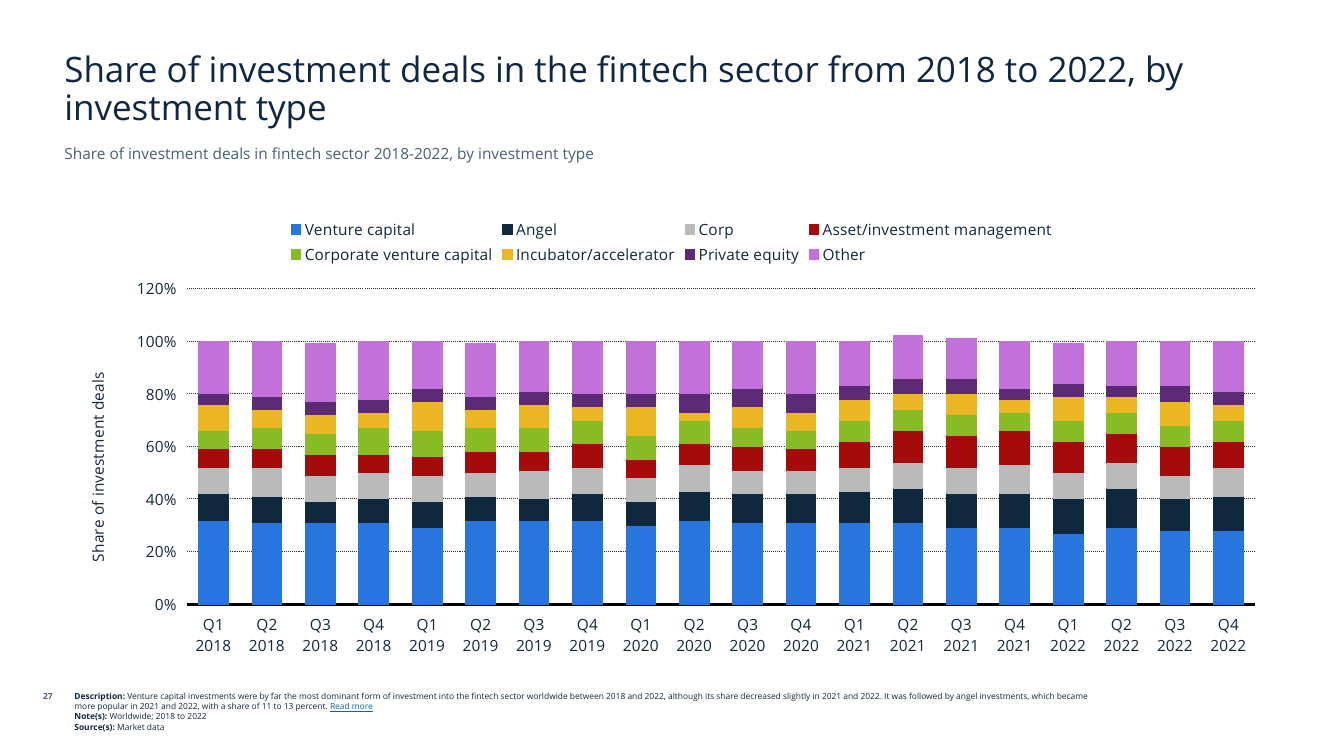
from pptx import Presentation
from pptx.chart.data import CategoryChartData
from pptx.dml.color import RGBColor
from pptx.enum.chart import XL_CHART_TYPE, XL_LEGEND_POSITION, XL_TICK_LABEL_POSITION, XL_TICK_MARK
from pptx.enum.dml import MSO_LINE
from pptx.enum.text import MSO_ANCHOR, PP_ALIGN
from pptx.util import Inches, Pt

STACKED = XL_CHART_TYPE.COLUMN_STACKED
LEGEND_TOP = XL_LEGEND_POSITION.TOP
LABELS_LOW = XL_TICK_LABEL_POSITION.LOW
NO_TICK = XL_TICK_MARK.NONE
DOTTED = MSO_LINE.ROUND_DOT
TOP, BOTTOM = MSO_ANCHOR.TOP, MSO_ANCHOR.BOTTOM
LEFT, RIGHT = PP_ALIGN.LEFT, PP_ALIGN.RIGHT

NAVY = RGBColor(0x0F, 0x27, 0x41)
SLATE = RGBColor(0x45, 0x5F, 0x7C)
LINK_BLUE = RGBColor(0x05, 0x63, 0xC1)
BLACK = RGBColor(0x00, 0x00, 0x00)
GRID_GREY = RGBColor(0x2F, 0x2F, 0x2F)
BLUE = RGBColor(0x28, 0x75, 0xDD)
DARK_BLUE = RGBColor(0x0F, 0x28, 0x3E)
GREY = RGBColor(0xBA, 0xBA, 0xBA)
RED = RGBColor(0xA6, 0x0B, 0x0B)
GREEN = RGBColor(0x87, 0xBC, 0x24)
YELLOW = RGBColor(0xEB, 0xB5, 0x23)
PURPLE = RGBColor(0x5D, 0x2B, 0x76)
LILAC = RGBColor(0xC2, 0x71, 0xDA)


def style_font(font, size, color, bold=False, underline=False):
    formats = {"name": "Open Sans", "size": Pt(size), "bold": bold, "underline": underline}
    for attribute, value in formats.items():
        setattr(font, attribute, value)
    font.color.rgb = color


def add_text(slide, box, paragraphs, size, anchor=TOP, align=LEFT, spacing=1.0):
    frame = slide.shapes.add_textbox(*[Inches(length) for length in box]).text_frame
    frame.word_wrap = True
    frame.vertical_anchor = anchor
    for index, runs in enumerate(paragraphs):
        paragraph = frame.add_paragraph() if index else frame.paragraphs[0]
        paragraph.alignment = align
        paragraph.line_spacing = spacing
        for text, color, bold, underline in runs:
            run = paragraph.add_run()
            run.text = text
            style_font(run.font, size, color, bold, underline)


presentation = Presentation()
presentation.slide_width = Inches(13.33)
presentation.slide_height = Inches(7.5)
slide = presentation.slides.add_slide(presentation.slide_layouts[6])

headline = "Share of investment deals in the fintech sector from 2018 to 2022, by investment type"
subtitle = "Share of investment deals in fintech sector 2018-2022, by investment type"
description = (
    "Venture capital investments were by far the most dominant form of investment into the "
    "fintech sector worldwide between 2018 and 2022, although its share decreased slightly in "
    "2021 and 2022. It was followed by angel investments, which became more popular in 2021 "
    "and 2022, with a share of 11 to 13 percent. "
)
footnotes = [
    [("Description: ", NAVY, True, False), (description, NAVY, False, False),
     ("Read more", LINK_BLUE, False, True)],
    [("Note(s): ", NAVY, True, False), ("Worldwide; 2018 to 2022", NAVY, False, False)],
    [("Source(s): ", NAVY, True, False), ("Market data", NAVY, False, False)],
]
add_text(slide, (0.54, 0.46, 12.24, 0.86), [[(headline, NAVY, False, False)]], 25,
         anchor=BOTTOM, spacing=0.9)
add_text(slide, (0.54, 1.38, 12.24, 0.34), [[(subtitle, SLATE, False, False)]], 11)
add_text(slide, (0.64, 6.81, 10.47, 0.58), footnotes, 6)
add_text(slide, (0, 6.81, 0.62, 0.3), [[("27", SLATE, True, False)]], 6, align=RIGHT)

deal_shares = [
    ("Venture capital", BLUE,
     [32, 31, 31, 31, 29, 32, 32, 32, 30, 32, 31, 31, 31, 31, 29, 29, 27, 29, 28, 28]),
    ("Angel", DARK_BLUE,
     [10, 10, 8, 9, 10, 9, 8, 10, 9, 11, 11, 11, 12, 13, 13, 13, 13, 15, 12, 13]),
    ("Corp", GREY,
     [10, 11, 10, 10, 10, 9, 11, 10, 9, 10, 9, 9, 9, 10, 10, 11, 10, 10, 9, 11]),
    ("Asset/investment management", RED,
     [7, 7, 8, 7, 7, 8, 7, 9, 7, 8, 9, 8, 10, 12, 12, 13, 12, 11, 11, 10]),
    ("Corporate venture capital", GREEN,
     [7, 8, 8, 10, 10, 9, 9, 9, 9, 9, 7, 7, 8, 8, 8, 7, 8, 8, 8, 8]),
    ("Incubator/accelerator", YELLOW,
     [10, 7, 7, 6, 11, 7, 9, 5, 11, 3, 8, 7, 8, 6, 8, 5, 9, 6, 9, 6]),
    ("Private equity", PURPLE,
     [4, 5, 5, 5, 5, 5, 5, 5, 5, 7, 7, 7, 5, 6, 6, 4, 5, 4, 6, 5]),
    ("Other", LILAC,
     [20, 21, 22, 22, 18, 20, 19, 20, 20, 20, 18, 20, 17, 16, 15, 18, 15, 17, 17, 19]),
]
chart_data = CategoryChartData(number_format="0%")
chart_data.categories = [f"Q{quarter} {year}" for year in range(2018, 2023) for quarter in range(1, 5)]
for investment_type, _, percentages in deal_shares:
    chart_data.add_series(investment_type, [percentage / 100 for percentage in percentages])

chart = slide.shapes.add_chart(
    STACKED, Inches(0.64), Inches(2.06), Inches(12.05), Inches(4.54), chart_data).chart
style_font(chart.font, 11, NAVY)
chart.has_title = False
chart.has_legend = True
chart.legend.position = LEGEND_TOP
chart.legend.include_in_layout = False
style_font(chart.legend.font, 11, NAVY)

columns = chart.plots[0]
columns.gap_width = 80
columns.overlap = 100
columns.vary_by_categories = False
for series, (_, color, _) in zip(columns.series, deal_shares):
    series.format.fill.solid()
    series.format.fill.fore_color.rgb = color
    series.format.line.color.rgb = color
    series.format.line.width = Pt(0.75)

quarter_axis, share_axis = chart.category_axis, chart.value_axis
for axis in (quarter_axis, share_axis):
    axis.major_tick_mark = NO_TICK
    axis.minor_tick_mark = NO_TICK
    axis.tick_label_position = LABELS_LOW
    style_font(axis.tick_labels.font, 11, NAVY)
quarter_axis.format.line.color.rgb = BLACK
quarter_axis.format.line.width = Pt(2)

scale = {"minimum_scale": 0, "maximum_scale": 1.2, "major_unit": 0.2, "has_major_gridlines": True}
for attribute, value in scale.items():
    setattr(share_axis, attribute, value)
share_axis.tick_labels.number_format = "#,##0%"
share_axis.tick_labels.number_format_is_linked = False
share_axis.format.line.fill.background()
gridline = share_axis.major_gridlines.format.line
gridline.color.rgb = GRID_GREY
gridline.width = Pt(0.75)
gridline.dash_style = DOTTED

axis_caption = share_axis.axis_title.text_frame
axis_caption._txBody.bodyPr.set("rot", "-5400000")
caption_run = axis_caption.paragraphs[0].add_run()
caption_run.text = "Share of investment deals"
style_font(caption_run.font, 11, NAVY)

presentation.save("out.pptx")
